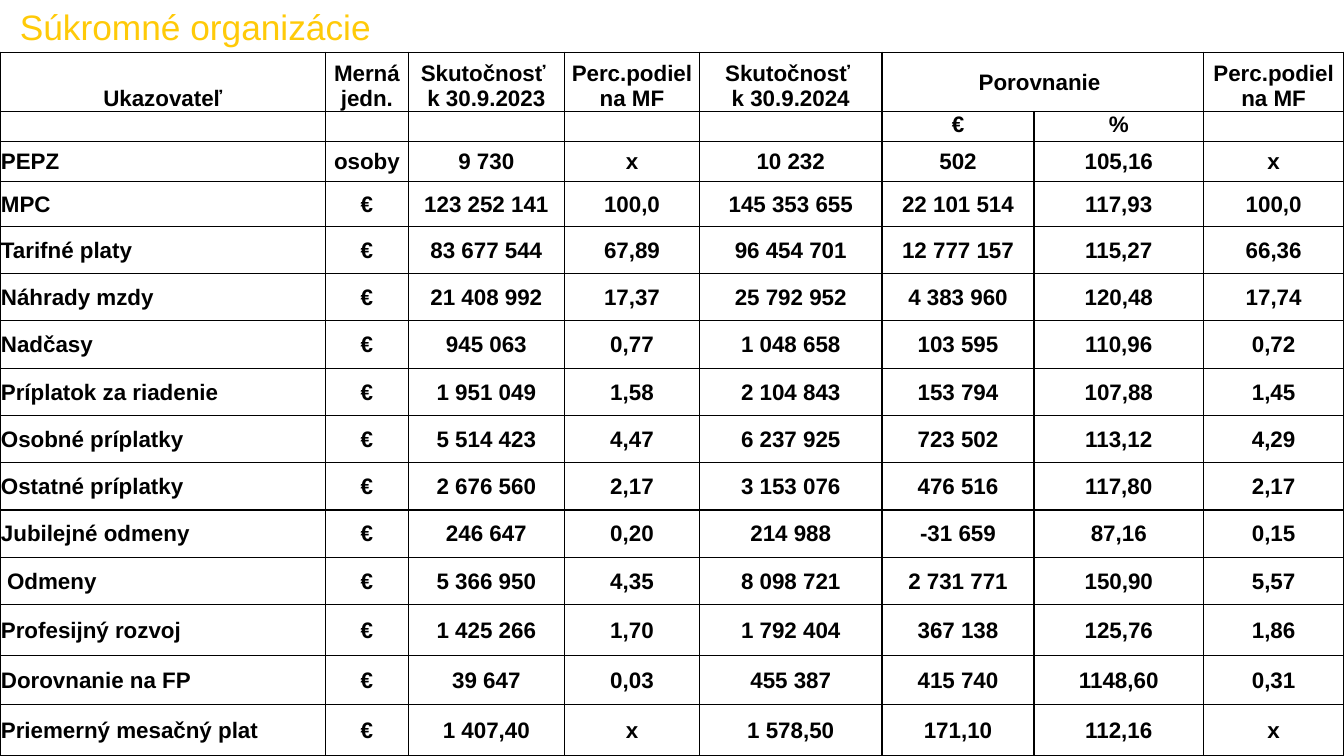
from lxml.etree import SubElement
from pptx import Presentation
from pptx.dml.color import RGBColor
from pptx.enum.text import MSO_ANCHOR, PP_ALIGN
from pptx.oxml.ns import qn
from pptx.util import Pt

WIDE, HIGH, TOP = 960, 540, 37.4
COLS = [232.6, 59, 111.6, 96.5, 130.3, 108.7, 121, 100.3]
ROWS = [42.2, 21.5, 28.6, 32] + [33.8] * 8 + [36.5, 35, 36.4]
SHARE = "Perc.podiel na MF"
HEAD = ["Ukazovateľ", "Merná jedn.", "Skutočnosť \nk 30.9.2023", SHARE,
        "Skutočnosť \nk 30.9.2024", "Porovnanie ", "", SHARE]
UNITS = ["", "", "", "", "", "€", "%", ""]
DATA = """PEPZ|osoby|9 730|x|10 232|502|105,16|x
MPC|€|123 252 141|100,0|145 353 655|22 101 514|117,93|100,0
Tarifné platy|€|83 677 544|67,89|96 454 701|12 777 157|115,27|66,36
Náhrady mzdy|€|21 408 992|17,37|25 792 952|4 383 960|120,48|17,74
Nadčasy|€|945 063|0,77|1 048 658|103 595|110,96|0,72
Príplatok za riadenie|€|1 951 049|1,58|2 104 843|153 794|107,88|1,45
Osobné príplatky|€|5 514 423|4,47|6 237 925|723 502|113,12|4,29
Ostatné príplatky|€|2 676 560|2,17|3 153 076|476 516|117,80|2,17
Jubilejné odmeny|€|246 647|0,20|214 988|-31 659|87,16|0,15
 Odmeny|€|5 366 950|4,35|8 098 721|2 731 771|150,90|5,57
Profesijný rozvoj|€|1 425 266|1,70|1 792 404|367 138|125,76|1,86
Dorovnanie na FP|€|39 647|0,03|455 387|415 740|1148,60|0,31
Priemerný mesačný plat|€|1 407,40|x|1 578,50|171,10|112,16|x"""


def color(code):
    """Turn a hex string into a colour."""
    return RGBColor.from_string(code)


def style(para, size, code, align, bold=False):
    """Set the font and alignment of a paragraph."""
    para.alignment = align
    font = para.font
    font.name, font.size, font.bold = "Arial", Pt(size), bold
    font.color.rgb = color(code)


def border(cell):
    """Draw a thin black line on all sides of a cell."""
    props = cell._tc.get_or_add_tcPr()
    for side in ("lnL", "lnR", "lnT", "lnB"):
        line = SubElement(props, qn(f"a:{side}"), w=str(Pt(1)))
        fill = SubElement(line, qn("a:solidFill"))
        SubElement(fill, qn("a:srgbClr"), val="000000")


def anchor(row, col):
    """Give the vertical anchor of a cell."""
    if row == 1:
        return MSO_ANCHOR.TOP
    if row == 0 and col != 5:
        return MSO_ANCHOR.BOTTOM
    return MSO_ANCHOR.MIDDLE


def fill_cell(cell, text, row, col):
    """Write and format one cell."""
    border(cell)
    cell.fill.solid()
    cell.fill.fore_color.rgb = color("FFFFFF")
    cell.margin_left = cell.margin_right = cell.margin_top = Pt(0.7)
    cell.margin_bottom = Pt(0)
    cell.vertical_anchor = anchor(row, col)
    cell.text = text
    left = col == 0 and row > 1
    for para in cell.text_frame.paragraphs:
        style(para, 16, "000000", PP_ALIGN.LEFT if left else PP_ALIGN.CENTER, True)


def add_title(slide, x, y, w, h):
    """Place the slide title in the given box."""
    title = slide.shapes.title
    title.left, title.top, title.width, title.height = Pt(x), Pt(y), Pt(w), Pt(h)
    frame = title.text_frame
    frame.text = " Súkromné organizácie"
    frame.vertical_anchor = MSO_ANCHOR.MIDDLE
    style(frame.paragraphs[0], 25.2, "FFCA08", PP_ALIGN.LEFT)


def add_grid(slide, x, y, w, h):
    """Place the table of wage figures in the given box."""
    cells = [HEAD, UNITS] + [line.split("|") for line in DATA.split("\n")]
    table = slide.shapes.add_table(len(ROWS), len(COLS), Pt(x), Pt(y), Pt(w), Pt(h)).table
    table.first_row = table.horz_banding = False
    for col, size in zip(table.columns, COLS):
        col.width = Pt(w * size / sum(COLS))
    for row, size in zip(table.rows, ROWS):
        row.height = Pt(h * size / sum(ROWS))
    for r, line in enumerate(cells):
        for c, text in enumerate(line):
            fill_cell(table.cell(r, c), text, r, c)
    table.cell(0, 5).merge(table.cell(0, 6))


def main():
    """Build and save the slide."""
    deck = Presentation()
    deck.slide_width, deck.slide_height = Pt(WIDE), Pt(HIGH)
    slide = deck.slides.add_slide(deck.slide_layouts[5])
    add_title(slide, 0, 0, 676.8, TOP)
    add_grid(slide, 0, TOP, WIDE, HIGH - TOP)
    deck.save("out.pptx")


if __name__ == "__main__":
    main()
